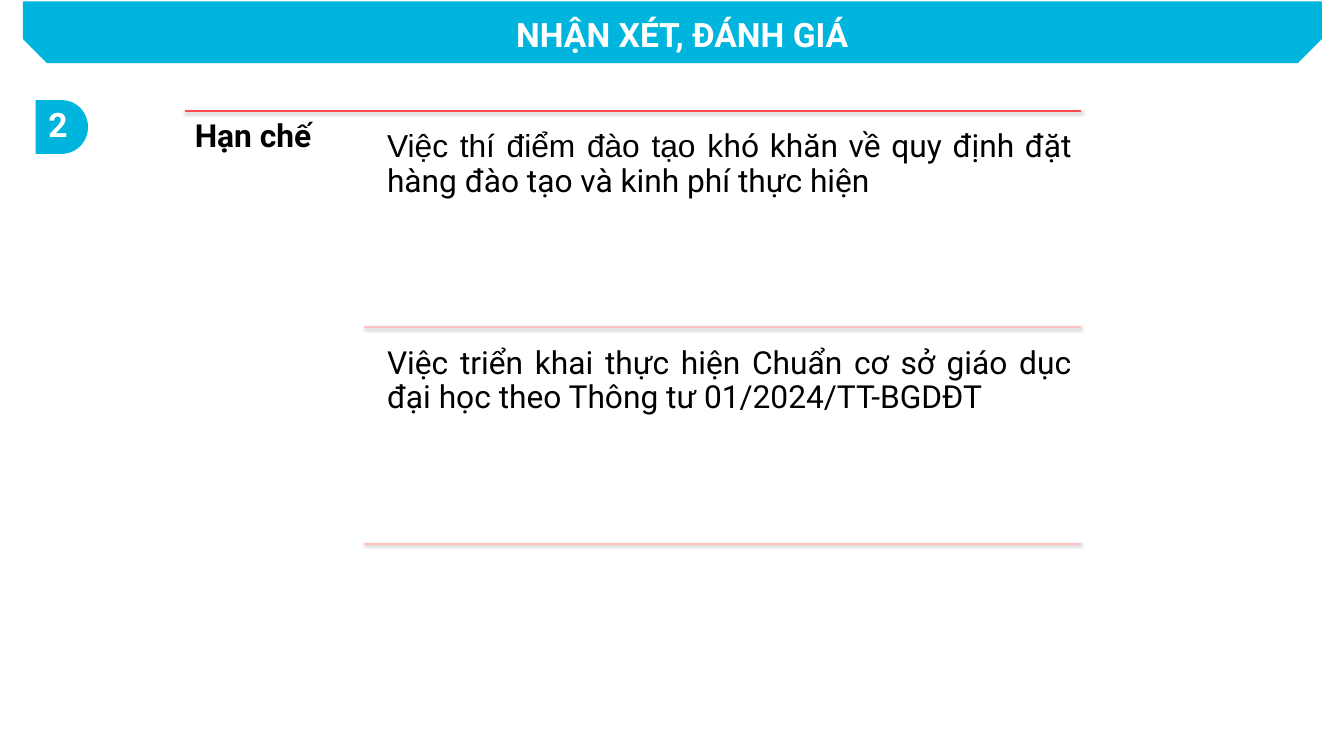
import dataclasses

import lxml.etree
import pptx
import pptx.dml.color
import pptx.enum.shapes
import pptx.enum.text
import pptx.oxml
import pptx.oxml.ns
import pptx.util

PX = 9144
ALIGN = pptx.enum.text.PP_ALIGN
SHAPE = pptx.enum.shapes.MSO_SHAPE


@dataclasses.dataclass(frozen=True)
class Theme:
    accent: str = "00B5DD"
    white: str = "FFFFFF"
    ink: str = "000000"
    strong_rule: str = "FF4D4D"
    soft_rule: str = "FFC2C2"
    font: str = "Roboto"
    fallback_font: str = "Arial"
    title_size: int = 36
    body_size: int = 34
    rule_width: int = 2


THEME = Theme()


def px(*lengths):
    return [pptx.util.Emu(length * PX) for length in lengths]


def rgb(value):
    return pptx.dml.color.RGBColor.from_string(value)


def write(frame, runs, size, color, bold=False, align=ALIGN.LEFT, inset=None, spacing=None):
    frame.word_wrap = True
    frame.auto_size = pptx.enum.text.MSO_AUTO_SIZE.NONE
    frame.vertical_anchor = pptx.enum.text.MSO_ANCHOR.TOP
    if inset is not None:
        margin, = px(inset)
        frame.margin_left = frame.margin_right = margin
        frame.margin_top = frame.margin_bottom = margin
    paragraph = frame.paragraphs[0]
    paragraph.alignment = align
    paragraph.space_before = pptx.util.Pt(0)
    if spacing is not None:
        paragraph.line_spacing = spacing
    for text, font in runs:
        run = paragraph.add_run()
        run.text = text
        run.font.name = font
        run.font.size = pptx.util.Pt(size)
        run.font.bold = bold
        run.font.color.rgb = rgb(color)


def add_block(slide, preset, box):
    block = slide.shapes.add_shape(preset, *px(*box))
    block.shadow.inherit = False
    block.fill.solid()
    block.fill.fore_color.rgb = rgb(THEME.accent)
    block.line.fill.background()
    return block


def add_rule(slide, left, right, top, color):
    rule = slide.shapes.add_connector(
        pptx.enum.shapes.MSO_CONNECTOR.STRAIGHT, *px(left, top, right, top))
    rule.line.color.rgb = rgb(color)
    rule.line.width = pptx.util.Pt(THEME.rule_width)
    qn = pptx.oxml.ns.qn
    effects = lxml.etree.SubElement(rule._element.spPr, qn("a:effectLst"))
    shadow = lxml.etree.SubElement(
        effects, qn("a:outerShdw"), blurRad="39370", dist="20320",
        dir="5400000", rotWithShape="0")
    shade = lxml.etree.SubElement(shadow, qn("a:srgbClr"), val=THEME.ink)
    lxml.etree.SubElement(shade, qn("a:alpha"), val="38000")


def build_header(slide, box, title_text):
    left, top, width, height = box
    banner = add_block(slide, SHAPE.SNIP_2_SAME_RECTANGLE, box)
    banner.adjustments[0] = 0
    banner.adjustments[1] = 0.39
    title = slide.shapes.title
    title._element.addprevious(banner._element)
    title.left, title.top, title.width, title.height = px(
        left + 22, top + 13, width - 14, height - 21)
    write(title.text_frame, [(title_text, THEME.font)], THEME.title_size,
          THEME.white, bold=True, align=ALIGN.CENTER)


def build_badge(slide, box, number):
    left, top, width, height = box
    add_block(slide, SHAPE.FLOWCHART_DELAY, box)
    label = slide.shapes.add_textbox(*px(left + 9, top, width, height - 9))
    write(label.text_frame, [(number, THEME.font)], THEME.title_size,
          THEME.white, bold=True)


def build_limitations(slide, box, heading, items):
    left, top, width, height = box
    right = left + width
    heading_width = 267
    gap, item_height, item_indent = 15, 307, 20
    add_rule(slide, left, right, top, THEME.strong_rule)
    heading_box = slide.shapes.add_textbox(*px(left, top, heading_width, height))
    write(heading_box.text_frame, [(heading, THEME.font)], THEME.body_size,
          THEME.ink, bold=True, inset=14, spacing=0.9)
    rule_left = left + heading_width - 1
    item_left = rule_left + item_indent
    for index, runs in enumerate(items):
        item_top = top + gap + index * (item_height + gap)
        item = slide.shapes.add_textbox(
            *px(item_left, item_top, right - item_left, item_height))
        write(item.text_frame, runs, THEME.body_size, THEME.ink,
              align=ALIGN.JUSTIFY, inset=14, spacing=0.9)
        add_rule(slide, rule_left, right, item_top + item_height, THEME.soft_rule)


def main():
    deck = pptx.Presentation()
    deck.slide_width, deck.slide_height = px(2000, 1125)
    slide = deck.slides.add_slide(deck.slide_layouts.get_by_name("Title Only"))
    build_header(slide, (34, 2, 1933, 92), "NHẬN XÉT, ĐÁNH GIÁ")
    build_badge(slide, (53, 149, 78, 80), "2")
    build_limitations(slide, (276, 165, 1333, 660), "Hạn chế", [
        [("Việc thí điểm đào tạo k", THEME.fallback_font),
         ("hó khăn về quy định đặt hàng đào tạo và kinh phí thực hiện", THEME.font)],
        [("Việc triển khai thực hiện Chuẩn cơ sở giáo dục đại học "
          "theo Thông tư 01/2024/TT-BGDĐT", THEME.font)],
    ])
    deck.save("out.pptx")


if __name__ == "__main__":
    main()
